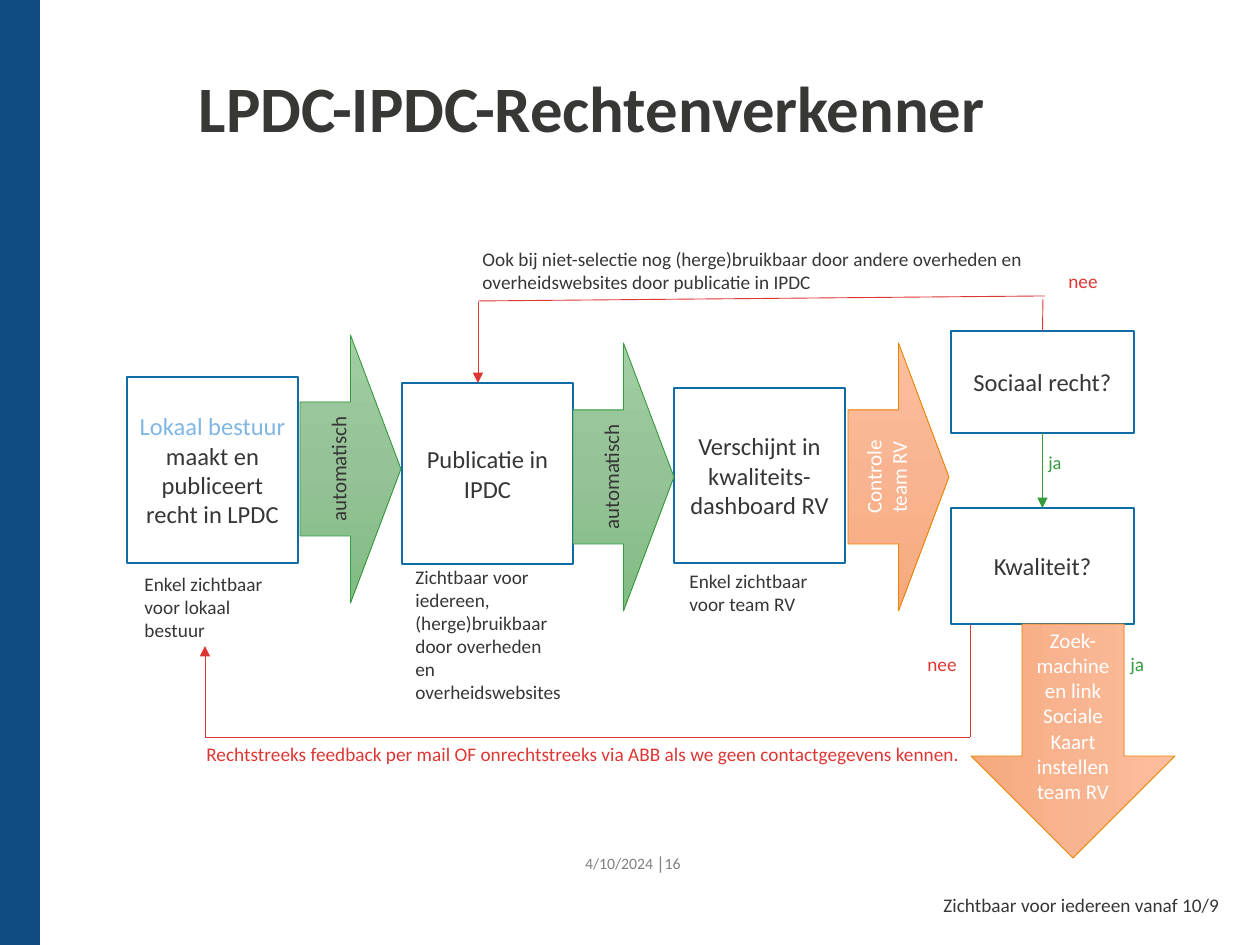
from copy import deepcopy

from lxml import etree
from pptx import Presentation
from pptx.dml.color import RGBColor
from pptx.enum.shapes import MSO_CONNECTOR, MSO_SHAPE
from pptx.enum.text import MSO_ANCHOR, PP_ALIGN
from pptx.oxml.ns import qn
from pptx.util import Pt

PX = 914400 / 126
FONT = "Calibri"
COLORS = {
    "bar": "0F4C81", "white": "FFFFFF", "text": "373636", "title": "373736",
    "grey": "808080", "sky": "80B6E4", "border": "0E6DA7",
    "red": "DD3734", "green": "359B3C", "orange": "E98300",
}
GRADIENTS = {
    "green": ("A2CDA3", "95C297", "81BC83"),
    "orange": ("FFBE9D", "F8B490", "F7A97C"),
}


def emu(*lengths):
    return [round(length * PX) for length in lengths]


def rgb(name):
    return RGBColor.from_string(COLORS[name])


def add_run(paragraph, text, size, color, bold=False):
    run = paragraph.add_run()
    run.text = text
    run.font.name = FONT
    run.font.size = Pt(size)
    run.font.bold = bold
    run.font.color.rgb = rgb(color)


def add_label(slide, x, y, w, h, text, color="text", size=11):
    label = slide.shapes.add_textbox(*emu(x, y, w, h))
    label.text_frame.word_wrap = True
    add_run(label.text_frame.paragraphs[0], text, size, color)


def add_shape(slide, kind, x, y, w, h, line, weight):
    shape = slide.shapes.add_shape(kind, *emu(x, y, w, h))
    shape.shadow.inherit = False
    shape.line.color.rgb = rgb(line)
    shape.line.width = Pt(weight)
    shape.text_frame.word_wrap = True
    shape.text_frame.vertical_anchor = MSO_ANCHOR.MIDDLE
    return shape


def add_step(slide, x, y, w, h, *runs):
    step = add_shape(slide, MSO_SHAPE.RECTANGLE, x, y, w, h, "border", 1)
    step.fill.solid()
    step.fill.fore_color.rgb = rgb("white")
    paragraph = step.text_frame.paragraphs[0]
    paragraph.alignment = PP_ALIGN.CENTER
    for text, color in runs:
        add_run(paragraph, text, 14, color)
    return step


def add_block_arrow(slide, x, y, w, h, line, color, *lines):
    arrow = add_shape(slide, MSO_SHAPE.RIGHT_ARROW, x, y, w, h, line, 0.5)
    arrow.fill.gradient()
    arrow.fill.gradient_angle = 270
    # The default gradient has two stops; a third one goes in the middle
    stop_list = next(arrow._element.spPr.iter(qn("a:gsLst")))
    stop_list.insert(1, deepcopy(stop_list[0]))
    for index, (stop, shade) in enumerate(zip(arrow.fill.gradient_stops, GRADIENTS[line])):
        stop.position = index / 2
        stop.color.rgb = RGBColor.from_string(shade)
    frame = arrow.text_frame
    frame._txBody.bodyPr.set("vert", "vert270")
    for index, text in enumerate(lines):
        paragraph = frame.add_paragraph() if index else frame.paragraphs[0]
        paragraph.alignment = PP_ALIGN.CENTER
        add_run(paragraph, text, 12, color)
    return arrow


def add_line(slide, x1, y1, x2, y2, color="red", head=False):
    line = slide.shapes.add_connector(MSO_CONNECTOR.STRAIGHT, *emu(x1, y1, x2, y2))
    line.line.color.rgb = rgb(color)
    line.line.width = Pt(0.5)
    if head:
        etree.SubElement(line.line._get_or_add_ln(), qn("a:tailEnd"), type="triangle")
    etree.SubElement(line._element.spPr, qn("a:effectLst"))
    return line


def add_side_bar(slide, x, y, w, h):
    bar = add_shape(slide, MSO_SHAPE.RECTANGLE, x, y, w, h, "bar", 1)
    bar.fill.solid()
    bar.fill.fore_color.rgb = rgb("bar")


def add_title(slide, x, y, w, h):
    frame = slide.shapes.add_textbox(*emu(x, y, w, h)).text_frame
    frame.word_wrap = True
    frame.margin_left = frame.margin_top = frame.margin_right = frame.margin_bottom = 0
    frame.paragraphs[0].line_spacing = Pt(38)
    add_run(frame.paragraphs[0], "LPDC-IPDC-Rechtenverkenner", 37, "title", True)


def add_flow(slide, x, y):
    """Three publication steps, each with a caption and an arrow to the next."""
    width = 171
    # Steps: left, top, height, runs
    for left, top, height, runs in (
        (0, 42, 186, [("Lokaal bestuur ", "sky"), ("maakt en publiceert recht in LPDC", "text")]),
        (275, 48, 181, [("Publicatie in IPDC", "text")]),
        (547, 53, 175, [("Verschijnt in kwaliteits-dashboard RV", "text")]),
    ):
        add_step(slide, x + left, y + top, width, height, *runs)
    # Arrows: left, top, line, text colour, text
    for left, top, line, color, text in (
        (173, 0, "green", "text", "automatisch"),
        (446, 8, "green", "text", "automatisch"),
        (721, 8, "orange", "white", "Controle team RV"),
    ):
        add_block_arrow(slide, x + left, y + top, 101, 268, line, color, text)
    # Captions: left, top, height, text
    for left, top, height, text in (
        (5, 231, 83, "Enkel zichtbaar voor lokaal bestuur"),
        (276, 224, 152, "Zichtbaar voor iedereen, (herge)bruikbaar door overheden en overheidswebsites"),
        (550, 228, 59, "Enkel zichtbaar voor team RV"),
    ):
        add_label(slide, x + left, y + top, width, height, text)


def add_decisions(slide, x, y, w):
    """Two questions, the answers and the final arrow."""
    middle = x + w / 2
    social = add_step(slide, x, y, w, 102, ("Sociaal recht?", "text"))
    quality = add_step(slide, x, y + 177, w, 116, ("Kwaliteit?", "text"))
    down = add_block_arrow(slide, x + 5, y + 308, 234, 204, "orange", "white",
                           "Zoek-machine en link Sociale Kaart instellen", "team RV")
    down.rotation = 90
    yes = add_line(slide, middle, y + 102, middle, y + 177, "green", head=True)
    yes.begin_connect(social, 2)
    yes.end_connect(quality, 0)
    add_label(slide, x + 85, y + 114, 77, 37, "ja", "green", 10.5)
    add_label(slide, x + 167, y + 315, 77, 37, "ja", "green")
    add_label(slide, x + 105, y - 68, 77, 37, "nee", "red")
    add_label(slide, x - 36, y + 315, 77, 37, "nee", "red")
    return social


def add_reuse_route(slide, x, y, w, social):
    """Route from a rejected right back to the IPDC publication."""
    add_label(slide, x - 8, y - 60, 585, 59,
              "Ook bij niet-selectie nog (herge)bruikbaar door andere overheden en "
              "overheidswebsites door publicatie in IPDC")
    rise = add_line(slide, x + w - 2, y + 30, x + w - 2, y - 2)
    rise.begin_connect(social, 0)
    add_line(slide, x, y, x + w, y - 5)
    add_line(slide, x, y + 1, x, y + 82, head=True)


def add_feedback_route(slide, x, y, w, h):
    """Route from insufficient quality back to the local authority."""
    right, bottom = x + w, y + h
    add_line(slide, right, y - 21, right, bottom)
    add_line(slide, right, bottom, x, bottom)
    add_line(slide, x, bottom, x, y, head=True)
    add_label(slide, x - 11, bottom - 1, 869, 37,
              "Rechtstreeks feedback per mail OF onrechtstreeks via ABB "
              "als we geen contactgegevens kennen.", "red")


def add_footer(slide, x, y, w, h):
    frame = slide.shapes.add_textbox(*emu(x, y, w, h)).text_frame
    frame.word_wrap = True
    frame.vertical_anchor = MSO_ANCHOR.MIDDLE
    paragraph = frame.paragraphs[0]
    paragraph.alignment = PP_ALIGN.RIGHT
    for text, bold in (("4/10/2024 ", False), ("│", True), ("16", False)):
        add_run(paragraph, text, 9, "grey", bold)
    add_label(slide, x + 387, y + 49, 329, 37, "Zichtbaar voor iedereen vanaf 10/9")


def main():
    deck = Presentation()
    deck.slide_width, deck.slide_height = emu(1260, 945)
    slide = deck.slides.add_slide(deck.slide_layouts[6])
    add_side_bar(slide, 0, 0, 39, 945)
    add_title(slide, 199, 79, 1022, 154)
    add_flow(slide, 127, 335)
    social = add_decisions(slide, 951, 331, 183)
    add_reuse_route(slide, 478, 301, 567, social)
    add_feedback_route(slide, 205, 646, 765, 91)
    add_footer(slide, 544, 838, 149, 50)
    deck.save("out.pptx")


if __name__ == "__main__":
    main()
